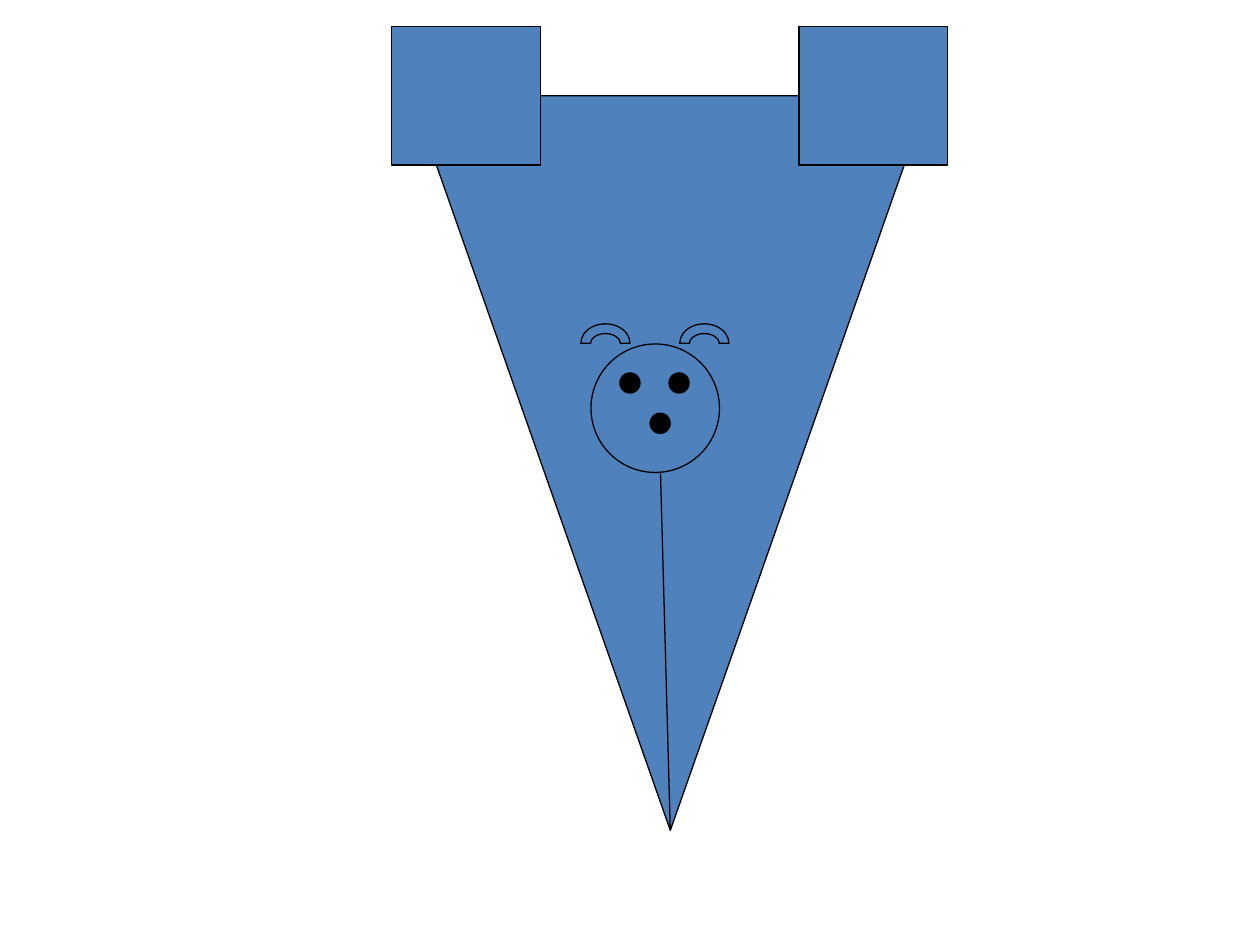
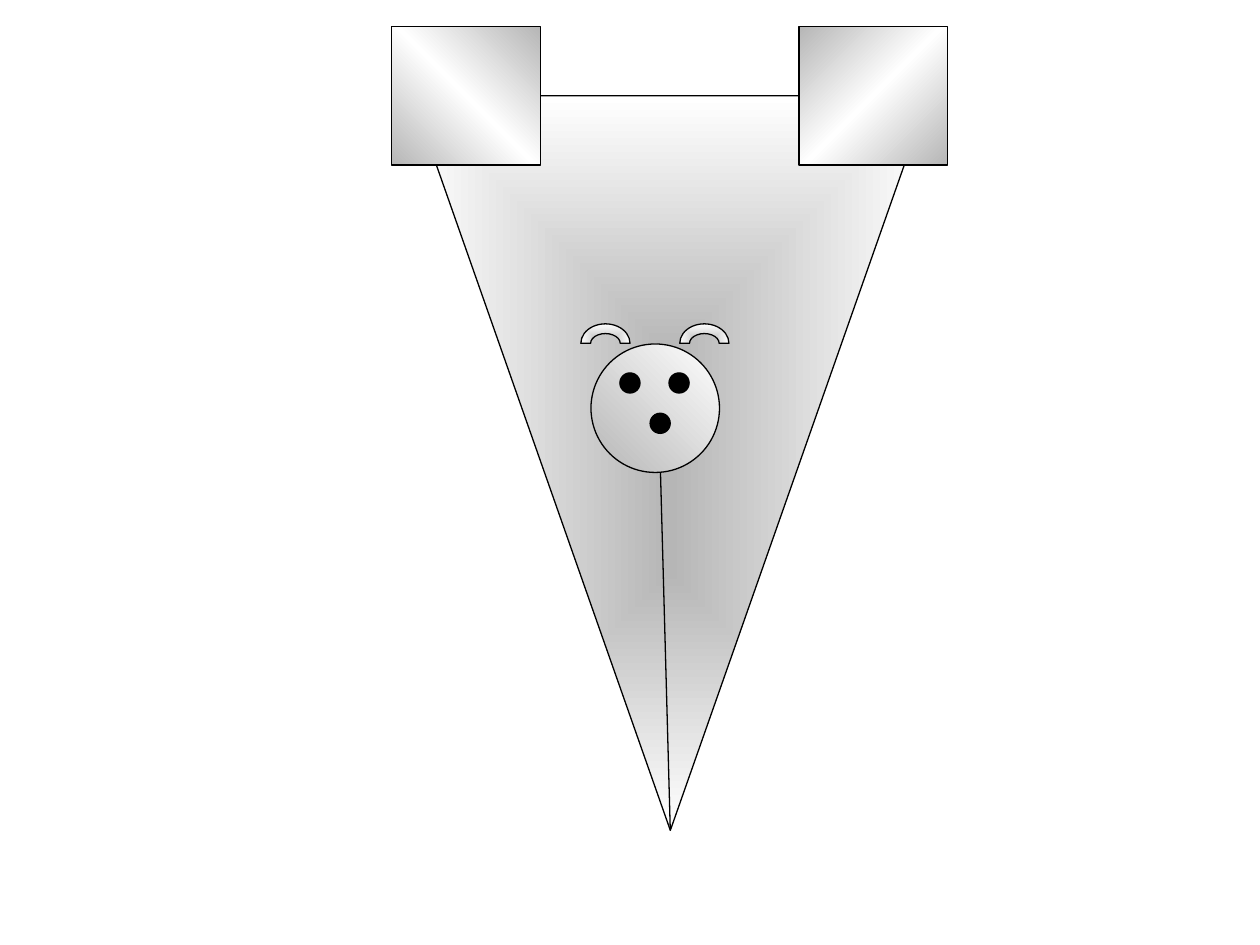
from dataclasses import dataclass

from pptx import Presentation
from pptx.dml.color import RGBColor
from pptx.enum.shapes import MSO_CONNECTOR, MSO_SHAPE as SHP
from pptx.oxml import parse_xml
from pptx.oxml.ns import nsdecls, qn
from pptx.util import Inches, Pt

COLS, ROWS = 100, 75
BLANK = 6


@dataclass(frozen=True)
class Theme:
    ink: str = "000000"
    blue: str = "4F81BD"
    light: str = "FFFFFF"
    shade: int = 46275      # darkens the light colour, in 1/1000 %
    line_width: float = 0.75


@dataclass(frozen=True)
class Gradient:
    """Stops are (percent, is_dark); either an angle or a path shape."""
    stops: tuple = ((0, True), (100, False))
    angle: int = 0
    shape: str = ""


class Canvas:
    """Holds the theme and the current slide; lengths are grid cells."""

    def __init__(self, prs, theme):
        self.prs, self.theme = prs, theme
        self.slide = None

    def new_slide(self):
        self.slide = self.prs.slides.add_slide(self.prs.slide_layouts[BLANK])

    def x(self, cols):
        return round(self.prs.slide_width * cols / COLS)

    def y(self, rows):
        return round(self.prs.slide_height * rows / ROWS)

    def outline(self, line):
        line.color.rgb = RGBColor.from_string(self.theme.ink)
        line.width = Pt(self.theme.line_width)

    def gradient(self, sp, grad):
        t = self.theme
        dark = f'<a:shade val="{t.shade}"/>'
        stops = "".join(
            f'<a:gs pos="{pos * 1000}"><a:srgbClr val="{t.light}">'
            f'{dark if is_dark else ""}</a:srgbClr></a:gs>'
            for pos, is_dark in grad.stops)
        if grad.shape:
            course = (f'<a:path path="{grad.shape}"><a:fillToRect l="50000" '
                      't="50000" r="50000" b="50000"/></a:path>')
        else:
            course = f'<a:lin ang="{grad.angle * 60000}" scaled="1"/>'
        sp.fill.background()
        spPr = sp.element.spPr
        spPr.replace(spPr.find(qn("a:noFill")), parse_xml(
            f'<a:gradFill rotWithShape="1" {nsdecls("a")}>'
            f'<a:gsLst>{stops}</a:gsLst>{course}</a:gradFill>'))

    def shape(self, kind, left, top, width, height, fill, rotation=0):
        sp = self.slide.shapes.add_shape(
            kind, self.x(left), self.y(top), self.x(width), self.y(height))
        sp.shadow.inherit = False
        sp.rotation = rotation
        if isinstance(fill, Gradient):
            self.gradient(sp, fill)
        else:
            sp.fill.solid()
            sp.fill.fore_color.rgb = RGBColor.from_string(fill)
        self.outline(sp.line)

    def line(self, x1, y1, x2, y2):
        cxn = self.slide.shapes.add_connector(
            MSO_CONNECTOR.STRAIGHT,
            self.x(x1), self.y(y1), self.x(x2), self.y(y2))
        cxn.element.spPr.append(parse_xml(f'<a:effectLst {nsdecls("a")}/>'))
        self.outline(cxn.line)


def draw_figure(c, body, head, corners, ears):
    c.new_slide()
    # Body and the line below the head
    c.shape(SHP.ISOSCELES_TRIANGLE, 32.7, 7.6, 41, 58.3, body, rotation=180)
    c.line(52.4, 36.7, 53.2, 65.9)
    # Head with two eyes and a nose
    c.shape(SHP.OVAL, 46.9, 27.3, 10.2, 10.2, head)
    for left, top in ((49.2, 29.6), (53.1, 29.6), (51.6, 32.8)):
        c.shape(SHP.OVAL, left, top, 1.6, 1.6, c.theme.ink)
    # Corner blocks
    for left, fill in zip((31.1, 63.4), corners):
        c.shape(SHP.RECTANGLE, left, 2.1, 11.8, 11, fill)
    # Ears
    for left in (46.1, 53.95):
        c.shape(SHP.BLOCK_ARC, left, 25.7, 3.9, 3.1, ears)


def main():
    prs = Presentation()
    prs.slide_width, prs.slide_height = Inches(10), Inches(7.5)
    theme = Theme()
    c = Canvas(prs, theme)

    # Slide 1: flat colour
    draw_figure(c, theme.blue, theme.blue, (theme.blue, theme.blue), theme.blue)

    # Slide 2: grey gradients
    sheen = ((0, True), (50, False), (100, True))
    draw_figure(c, body=Gradient(shape="shape"), head=Gradient(angle=315),
                corners=[Gradient(sheen, angle) for angle in (315, 45)],
                ears=Gradient(shape="rect"))

    prs.save("out.pptx")


if __name__ == "__main__":
    main()
